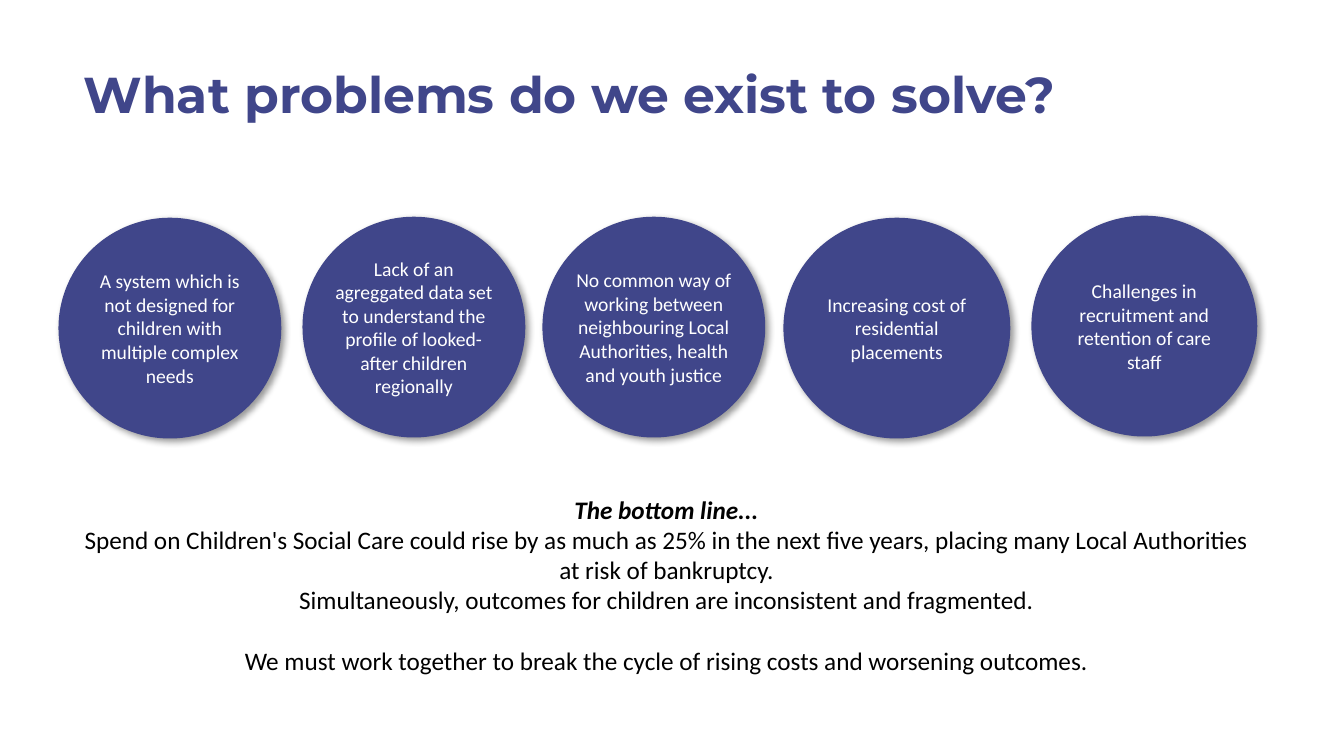
"""Build the slide on the problems in children's social care."""
from dataclasses import dataclass

from lxml import etree
from pptx import Presentation
from pptx.dml.color import RGBColor
from pptx.enum.shapes import MSO_SHAPE
from pptx.enum.text import MSO_ANCHOR, PP_ALIGN
from pptx.oxml.ns import qn
from pptx.util import Pt

PX = 9144
OVAL, RECTANGLE = MSO_SHAPE.OVAL, MSO_SHAPE.RECTANGLE
TOP, MIDDLE = MSO_ANCHOR.TOP, MSO_ANCHOR.MIDDLE
LEFT, CENTER = PP_ALIGN.LEFT, PP_ALIGN.CENTER


@dataclass(frozen=True)
class Theme:
    indigo: RGBColor = RGBColor(0x40, 0x46, 0x8A)
    white: RGBColor = RGBColor(0xFF, 0xFF, 0xFF)
    black: RGBColor = RGBColor(0, 0, 0)
    heading_font: str = "Montserrat"
    body_font: str = "Calibri"
    title_size: int = 36
    body_size: int = 18
    circle_size: int = 14


THEME = Theme()


def write(shape, lines, font, size, color, align, anchor, margins):
    frame = shape.text_frame
    frame.word_wrap = True
    frame.vertical_anchor = anchor
    (frame.margin_left, frame.margin_top,
     frame.margin_right, frame.margin_bottom) = [side * PX for side in margins]
    frame.text = "\n".join(lines)
    for para in frame.paragraphs:
        para.alignment = align
        for span in para.runs:
            span.font.name = font
            span.font.size = Pt(size)
            span.font.color.rgb = color
    return frame.paragraphs


def add_shadow(shape):
    effects = shape._element.spPr.find(qn("a:effectLst"))
    shadow = etree.SubElement(effects, qn("a:outerShdw"), blurRad=str(Pt(5)),
                              dist=str(Pt(3)), dir=str(45 * 60000),
                              algn="tl", rotWithShape="0")
    color = etree.SubElement(shadow, qn("a:srgbClr"), val=str(THEME.black))
    etree.SubElement(color, qn("a:alpha"), val="40000")


deck = Presentation()
deck.slide_width, deck.slide_height = 1333 * PX, 750 * PX
page = deck.slides.add_slide(deck.slide_layouts[6])

title = page.shapes.add_textbox(73 * PX, 24 * PX, 1150 * PX, 145 * PX)
heading = write(title, ["What problems do we exist to solve?"], THEME.heading_font,
                THEME.title_size, THEME.indigo, LEFT, MIDDLE, (10, 5, 10, 5))[0]
heading.line_spacing = 0.9
heading.runs[0].font.bold = True

problems = [
    (58, 216, 221, "A system which is not designed for children with multiple complex needs"),
    (300, 215, 221, "Lack of an agreggated data set to understand the profile of "
                    "looked-after children regionally"),
    (538, 215, 221, "No common way of working between neighbouring Local Authorities, "
                    "health and youth justice"),
    (777, 216, 225, "Increasing cost of residential placements"),
    (1023, 214, 224, "Challenges in recruitment and retention of care staff"),
]
for left, top, width, problem in problems:
    circle = page.shapes.add_shape(OVAL, left * PX, top * PX, width * PX, 219 * PX)
    circle.fill.solid()
    circle.fill.fore_color.rgb = THEME.indigo
    circle.line.fill.background()
    circle.shadow.inherit = False
    add_shadow(circle)
    write(circle, [problem], THEME.body_font, THEME.circle_size, THEME.white,
          CENTER, MIDDLE, (0, 0, 0, 0))

summary = page.shapes.add_shape(RECTANGLE, 58 * PX, 475 * PX, 1211 * PX, 212 * PX)
summary.fill.solid()
summary.fill.fore_color.rgb = THEME.white
summary.line.color.rgb = THEME.white
summary.line.width = Pt(1)
summary.shadow.inherit = False
bottom_line = [
    "The bottom line...",
    "Spend on Children's Social Care could rise by as much as 25% in the next five years, "
    "placing many Local Authorities at risk of bankruptcy.",
    "Simultaneously, outcomes for children are inconsistent and fragmented.",
    "We must work together to break the cycle of rising costs and worsening outcomes.",
]
paras = write(summary, bottom_line, THEME.body_font, THEME.body_size, THEME.black,
              CENTER, TOP, (15, 15, 20, 15))
lead = paras[0].runs[0].font
lead.bold = lead.italic = True
paras[-1].space_before = Pt(22)

deck.save("out.pptx")
